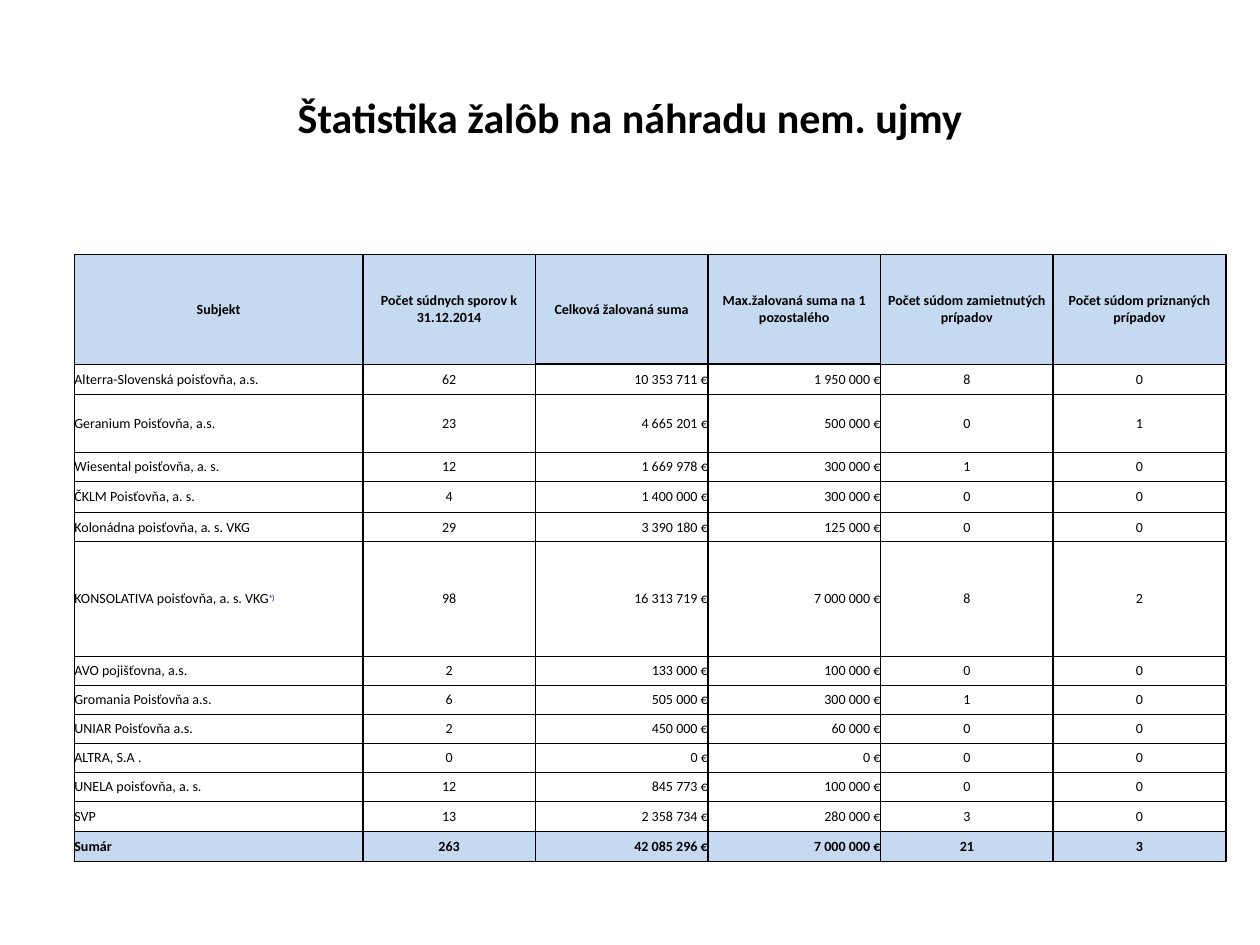
from lxml.etree import SubElement
from pptx import Presentation
from pptx.dml.color import RGBColor
from pptx.enum.text import MSO_ANCHOR as Anchor, PP_ALIGN as Align
from pptx.oxml.ns import qn
from pptx.util import Inches, Pt

BLACK = RGBColor(0x00, 0x00, 0x00)
NAVY = RGBColor(0x00, 0x00, 0x80)
LIGHT_BLUE = RGBColor(0xC5, 0xD9, 0xF1)

TITLE = "Štatistika žalôb na náhradu nem. ujmy"
HEADER = (
    "Subjekt", "Počet súdnych sporov k 31.12.2014", "Celková žalovaná suma",
    "Max.žalovaná suma na 1 pozostalého", "Počet súdom zamietnutých prípadov",
    "Počet súdom priznaných prípadov",
)
INSURERS = [
    ("Alterra-Slovenská poisťovňa, a.s.", "62", "10 353 711 €", "1 950 000 €", "8", "0"),
    ("Geranium Poisťovňa, a.s.", "23", "4 665 201 €", "500 000 €", "0", "1"),
    ("Wiesental poisťovňa, a. s.", "12", "1 669 978 €", "300 000 €", "1", "0"),
    ("ČKLM Poisťovňa, a. s.", "4", "1 400 000 €", "300 000 €", "0", "0"),
    ("Kolonádna poisťovňa, a. s. VKG", "29", "3 390 180 €", "125 000 €", "0", "0"),
    ("KONSOLATIVA poisťovňa, a. s. VKG", "98", "16 313 719 €", "7 000 000 €", "8", "2"),
    ("AVO pojišťovna, a.s.", "2", "133 000 €", "100 000 €", "0", "0"),
    ("Gromania Poisťovňa a.s.", "6", "505 000 €", "300 000 €", "1", "0"),
    ("UNIAR Poisťovňa a.s.", "2", "450 000 €", "60 000 €", "0", "0"),
    ("ALTRA, S.A .", "0", "0 €", "0 €", "0", "0"),
    ("UNELA poisťovňa, a. s.", "12", "845 773 €", "100 000 €", "0", "0"),
    ("SVP", "13", "2 358 734 €", "280 000 €", "3", "0"),
]
TOTAL = ("Sumár", "263", "42 085 296 €", "7 000 000 €", "21", "3")
ROWS = [HEADER, *INSURERS, TOTAL]
LAST_ROW = len(ROWS) - 1
FOOTNOTE_ROW, FOOTNOTE_MARK = 6, "*)"

COLUMN_WIDTHS = [2.29] + [1.37] * 5
ROW_HEIGHTS = [0.87, 0.24, 0.46, 0.23, 0.25, 0.23, 0.91] + [0.23] * 5 + [0.24] * 2
COLUMN_ALIGNS = [Align.LEFT, Align.CENTER, Align.RIGHT, Align.RIGHT, Align.CENTER, Align.CENTER]

THIN, THICK = 0.5, 1
# Horizontal lines, numbered from the top of the table, that are thick across or in some columns
THICK_LINES = {0, LAST_ROW, LAST_ROW + 1}
THICK_SEGMENTS = {(1, 2), (1, 3), (2, 5)}


def add_text(paragraph, text, size=8, bold=False, font="Calibri", color=BLACK,
             align=None, superscript=False):
    run = paragraph.add_run()
    run.text = text
    run.font.size, run.font.bold, run.font.name = Pt(size), bold, font
    run.font.color.rgb = color
    if align is not None:
        paragraph.alignment = align
    if superscript:
        run._r.get_or_add_rPr().set("baseline", "30000")


def line_width(line, column):
    return THICK if line in THICK_LINES or (line, column) in THICK_SEGMENTS else THIN


def set_borders(cell, left, right, top, bottom):
    properties = cell._tc.get_or_add_tcPr()
    for tag, width in (("a:lnL", left), ("a:lnR", right), ("a:lnT", top), ("a:lnB", bottom)):
        line = SubElement(properties, qn(tag), w=str(Pt(width)))
        SubElement(SubElement(line, qn("a:solidFill")), qn("a:srgbClr"), val=str(BLACK))


def format_cell(cell, row, column):
    cell.margin_left = cell.margin_right = cell.margin_top = cell.margin_bottom = 0
    cell.vertical_anchor = Anchor.MIDDLE
    set_borders(cell, THICK, THICK, line_width(row, column), line_width(row + 1, column))
    if row in (0, LAST_ROW):
        cell.fill.solid()
        cell.fill.fore_color.rgb = LIGHT_BLUE
    else:
        cell.fill.background()


def add_statistics_table(slide):
    frame = slide.shapes.add_table(
        len(ROWS), len(HEADER), Inches(0.59), Inches(2.02),
        Inches(sum(COLUMN_WIDTHS)), Inches(sum(ROW_HEIGHTS)))
    table = frame.table
    table.first_row = table.horz_banding = False
    for column, width in zip(table.columns, COLUMN_WIDTHS):
        column.width = Inches(width)
    for row, height in zip(table.rows, ROW_HEIGHTS):
        row.height = Inches(height)
    for row, values in enumerate(ROWS):
        for column, value in enumerate(values):
            cell = table.cell(row, column)
            format_cell(cell, row, column)
            add_text(cell.text_frame.paragraphs[0], value, bold=row in (0, LAST_ROW),
                     align=Align.CENTER if row == 0 else COLUMN_ALIGNS[column])
    add_text(table.cell(FOOTNOTE_ROW, 0).text_frame.paragraphs[0], FOOTNOTE_MARK,
             size=7, font="Arial", color=NAVY, superscript=True)


def main():
    presentation = Presentation()
    presentation.slide_width, presentation.slide_height = Inches(10), Inches(7.5)
    slide = presentation.slides.add_slide(presentation.slide_layouts[5])
    title = slide.shapes.title
    title.left, title.top = Inches(0.5), Inches(0.3)
    title.width, title.height = Inches(9), Inches(1.25)
    title.text_frame.vertical_anchor = Anchor.MIDDLE
    add_text(title.text_frame.paragraphs[0], TITLE, size=24, bold=True, align=Align.CENTER)
    add_statistics_table(slide)
    presentation.save("out.pptx")


if __name__ == "__main__":
    main()
